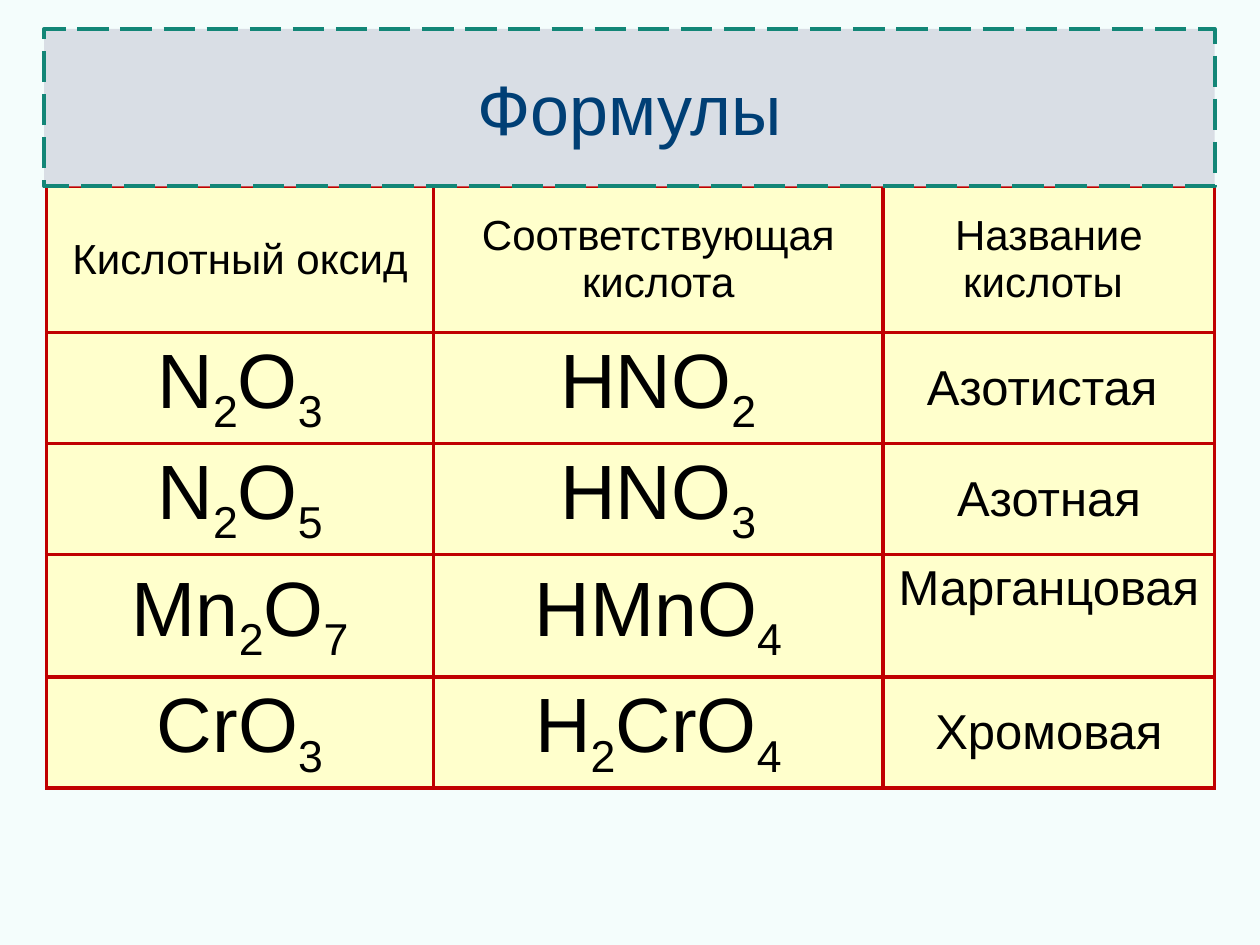
from itertools import groupby

from lxml import etree
from pptx import Presentation
from pptx.dml.color import RGBColor
from pptx.enum.dml import MSO_LINE
from pptx.enum.shapes import MSO_SHAPE
from pptx.enum.text import MSO_ANCHOR, PP_ALIGN
from pptx.oxml.ns import qn
from pptx.util import Inches, Pt

RECT = MSO_SHAPE.RECTANGLE
LONG_DASH = MSO_LINE.LONG_DASH
CENTER = PP_ALIGN.CENTER
MIDDLE, TOP = MSO_ANCHOR.MIDDLE, MSO_ANCHOR.TOP

BACKGROUND = RGBColor(0xF4, 0xFD, 0xFC)
TITLE_FILL = RGBColor(0xD9, 0xDE, 0xE5)
TITLE_LINE = RGBColor(0x13, 0x86, 0x77)
TITLE_TEXT = RGBColor(0x00, 0x3F, 0x75)
CELL_FILL = RGBColor(0xFF, 0xFF, 0xCC)
BORDER = RGBColor(0xC0, 0x00, 0x00)
BLACK = RGBColor(0x00, 0x00, 0x00)

HEADERS = ["Кислотный оксид", "Соответствующая кислота", "Название кислоты "]
ACIDS = [
    ("N2O3", "HNO2", "Азотистая "),
    ("N2O5", "HNO3", "Азотная"),
    ("Mn2O7", "HMnO4", "Марганцовая "),
    ("CrO3", "H2CrO4", "Хромовая"),
]
COLUMNS = [3.07, 3.57, 2.63]
ROWS = [1.16, 0.88, 0.88, 0.97, 0.88]
HEADER_SIZE, FORMULA_SIZE, NAME_SIZE = 24, 44, 28


class SlideBuilder:
    font = "Arial"
    line_width = Pt(2.25)

    def __init__(self, prs):
        self.s = prs.slides.add_slide(prs.slide_layouts[6])
        fill = self.s.background.fill
        fill.solid()
        fill.fore_color.rgb = BACKGROUND

    def text(self, tf, text, size, color):
        p = tf.paragraphs[0]
        p.alignment = CENTER
        p.font.name, p.font.size = self.font, Pt(size)
        p.font.color.rgb = color
        for is_index, chars in groupby(text, str.isdigit):
            r = p.add_run()
            r.text = "".join(chars)
            if is_index:
                r._r.get_or_add_rPr().set("baseline", "-25000")

    def title(self, text, left, top, width, height):
        sp = self.s.shapes.add_shape(
            RECT, Inches(left), Inches(top), Inches(width), Inches(height))
        sp.shadow.inherit = False
        sp.fill.solid()
        sp.fill.fore_color.rgb = TITLE_FILL
        sp.line.color.rgb = TITLE_LINE
        sp.line.width = self.line_width
        sp.line.dash_style = LONG_DASH
        sp.text_frame.vertical_anchor = MIDDLE
        self.text(sp.text_frame, text, 40, TITLE_TEXT)

    def cell(self, cell, text, size, anchor=MIDDLE):
        tcPr = cell._tc.get_or_add_tcPr()
        for side in ("lnL", "lnR", "lnT", "lnB"):
            ln = etree.SubElement(tcPr, qn(f"a:{side}"), w=str(self.line_width))
            fill = etree.SubElement(ln, qn("a:solidFill"))
            etree.SubElement(fill, qn("a:srgbClr"), val=str(BORDER))
        cell.fill.solid()
        cell.fill.fore_color.rgb = CELL_FILL
        cell.vertical_anchor = anchor
        self.text(cell.text_frame, text, size, BLACK)

    def table(self, left, top):
        table = self.s.shapes.add_table(
            len(ROWS), len(COLUMNS), Inches(left), Inches(top),
            Inches(sum(COLUMNS)), Inches(sum(ROWS))).table
        for column, width in zip(table.columns, COLUMNS):
            column.width = Inches(width)
        for row, height in zip(table.rows, ROWS):
            row.height = Inches(height)
        for j, text in enumerate(HEADERS):
            self.cell(table.cell(0, j), text, HEADER_SIZE)
        for i, (oxide, acid, name) in enumerate(ACIDS, 1):
            self.cell(table.cell(i, 0), oxide, FORMULA_SIZE)
            self.cell(table.cell(i, 1), acid, FORMULA_SIZE)
            anchor = TOP if name.startswith("Марганцовая") else MIDDLE
            self.cell(table.cell(i, 2), name, NAME_SIZE, anchor)


def main():
    prs = Presentation()
    prs.slide_width, prs.slide_height = Inches(10), Inches(7.5)
    slide = SlideBuilder(prs)
    slide.table(0.37, 1.48)
    slide.title("Формулы", 0.35, 0.23, 9.29, 1.25)
    prs.save("out.pptx")


if __name__ == "__main__":
    main()
